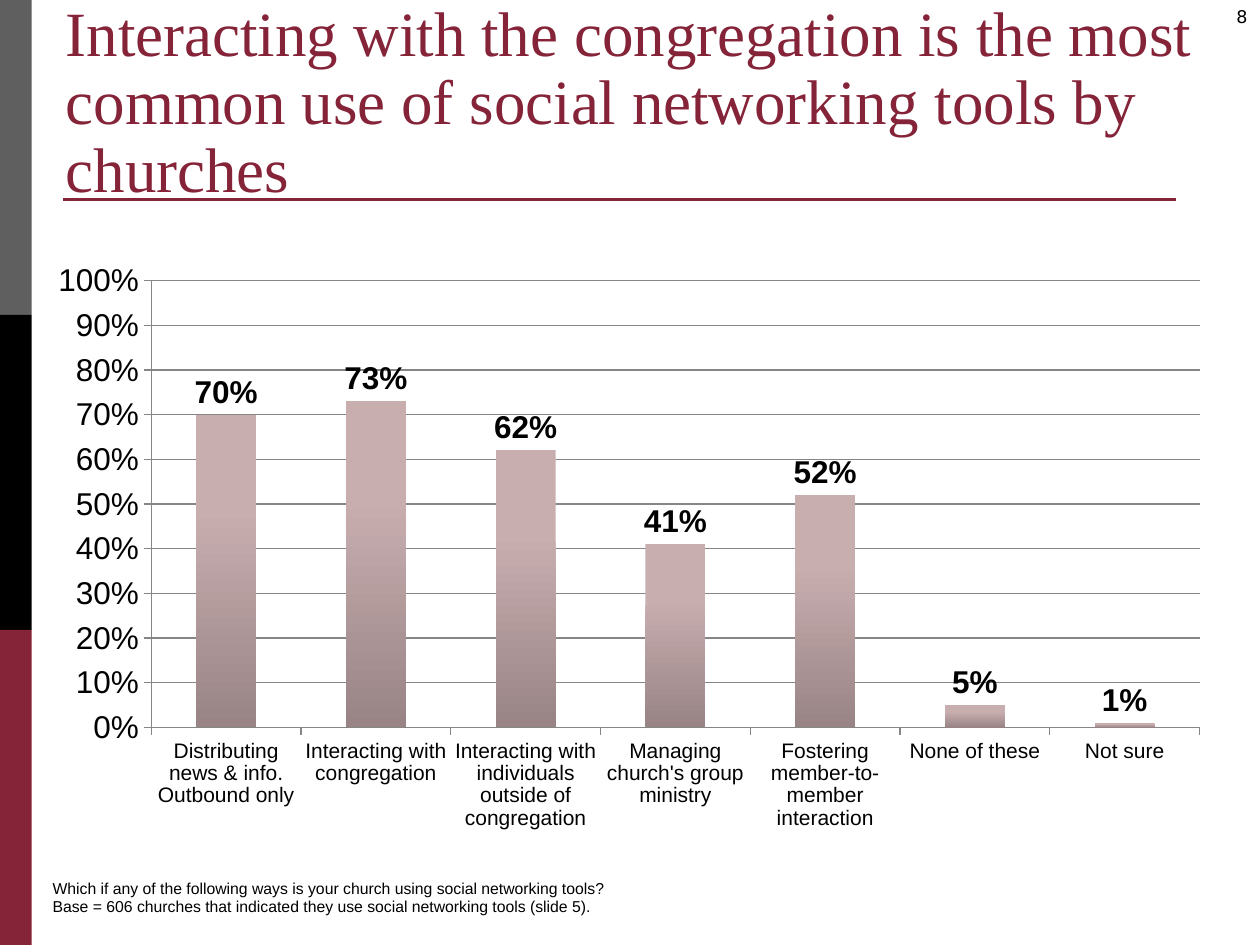
from lxml.etree import SubElement
from pptx import Presentation
from pptx.chart.data import CategoryChartData
from pptx.dml.color import RGBColor
from pptx.enum.chart import XL_CHART_TYPE, XL_LABEL_POSITION, XL_TICK_MARK
from pptx.enum.shapes import MSO_CONNECTOR, MSO_SHAPE
from pptx.enum.text import MSO_ANCHOR, PP_ALIGN
from pptx.oxml import parse_xml
from pptx.oxml.ns import nsdecls, qn
from pptx.util import Cm, Pt

MAROON, GREY, BLACK = "852338", "5F5F5F", "000000"
AXIS_GREY, BAR_TOP, BAR_BOTTOM = "868686", "C9AEB0", "988485"

USES = {
    "Distributing news & info. Outbound only": 0.70,
    "Interacting with congregation": 0.73,
    "Interacting with individuals outside of congregation": 0.62,
    "Managing church's group ministry": 0.41,
    "Fostering member-to-member interaction": 0.52,
    "None of these": 0.05,
    "Not sure": 0.01,
}


def rgb(color):
    return RGBColor.from_string(color)


def set_font(font, size, color=BLACK, name="Arial", bold=False):
    font.size, font.name, font.bold = Pt(size), name, bold
    font.color.rgb = rgb(color)


def place(sp, left, top, width, height):
    sp.left, sp.top, sp.width, sp.height = Cm(left), Cm(top), Cm(width), Cm(height)


def set_plot_area(chart, x, y, w, h):
    """Fix the inner plot area, given as fractions of the chart."""
    area = chart.plots[0]._element.getparent()
    for old in area.findall(qn("c:layout")):
        area.remove(old)
    layout = parse_xml(f"<c:layout {nsdecls('c')}><c:manualLayout/></c:layout>")
    values = {"layoutTarget": "inner", "xMode": "edge", "yMode": "edge",
              "x": x, "y": y, "w": w, "h": h}
    for tag, value in values.items():
        SubElement(layout[0], qn(f"c:{tag}")).set("val", str(value))
    area.insert(0, layout)


def keep_labels_level(axis):
    """Stop long tick labels from being slanted, so that they wrap."""
    body = axis._element.find(qn("c:txPr")).find(qn("a:bodyPr"))
    body.set("rot", "0")
    body.set("vert", "horz")


class SlideBuilder:
    def __init__(self, prs):
        self.s = prs.slides.add_slide(prs.slide_layouts[5])

    def title(self, text, *box):
        sp = self.s.shapes.title
        place(sp, *box)
        tf = sp.text_frame
        tf.text = text
        tf.word_wrap = True
        tf.vertical_anchor = MSO_ANCHOR.BOTTOM
        p = tf.paragraphs[0]
        p.alignment = PP_ALIGN.LEFT
        p.line_spacing = 0.9
        set_font(p.runs[0].font, 36, MAROON, "Times New Roman")

    def band(self, color, *box):
        sp = self.s.shapes.add_shape(MSO_SHAPE.RECTANGLE, *map(Cm, box))
        sp.shadow.inherit = False
        sp.fill.solid()
        sp.fill.fore_color.rgb = rgb(color)
        sp.line.fill.background()

    def rule(self, left, right, y):
        line = self.s.shapes.add_connector(
            MSO_CONNECTOR.STRAIGHT, Cm(left), Cm(y), Cm(right), Cm(y))
        line.line.color.rgb = rgb(MAROON)
        line.line.width = Pt(1.5)
        SubElement(line._element.spPr, qn("a:effectLst"))

    def text(self, text, size, *box, name="Arial", align=PP_ALIGN.LEFT):
        tf = self.s.shapes.add_textbox(*map(Cm, box)).text_frame
        tf.word_wrap = True
        tf.text = text
        p = tf.paragraphs[0]
        p.alignment = align
        for r in p.runs:
            set_font(r.font, size, name=name)

    def column_chart(self, values, *box):
        data = CategoryChartData(number_format="0%")
        data.categories = list(values)
        data.add_series("Series 1", list(values.values()))
        chart = self.s.shapes.add_chart(
            XL_CHART_TYPE.COLUMN_CLUSTERED, *map(Cm, box), data).chart
        chart.has_legend = chart.has_title = False
        set_font(chart.font, 18)
        set_plot_area(chart, 0.093, 0.075, 0.889, 0.705)

        for axis, size in ((chart.category_axis, 12), (chart.value_axis, 18)):
            axis.major_tick_mark = XL_TICK_MARK.OUTSIDE
            axis.minor_tick_mark = XL_TICK_MARK.NONE
            axis.format.line.color.rgb = rgb(AXIS_GREY)
            set_font(axis.tick_labels.font, size)
            keep_labels_level(axis)
        axis = chart.value_axis
        axis.minimum_scale, axis.maximum_scale, axis.major_unit = 0, 1, 0.1
        axis.tick_labels.number_format = "0%"
        axis.tick_labels.number_format_is_linked = False
        axis.major_gridlines.format.line.color.rgb = rgb(AXIS_GREY)

        plot = chart.plots[0]
        plot.gap_width = 150
        plot.vary_by_categories = False
        fill = plot.series[0].format.fill
        fill.gradient()
        fill.gradient_angle = 270
        for stop, position, color in zip(
                fill.gradient_stops, (0.3, 1), (BAR_TOP, BAR_BOTTOM)):
            stop.position = position
            stop.color.rgb = rgb(color)

        labels = plot.series[0].data_labels
        labels.show_value = True
        labels.number_format = "0%"
        labels.number_format_is_linked = False
        labels.position = XL_LABEL_POSITION.OUTSIDE_END
        set_font(labels.font, 18, bold=True)


def main():
    prs = Presentation()
    prs.slide_width, prs.slide_height = Cm(25.4), Cm(19.05)
    slide = SlideBuilder(prs)

    band_height = 19.05 / 3
    for i, color in enumerate((GREY, BLACK, MAROON)):
        slide.band(color, 0, i * band_height, 0.64, band_height)
    slide.rule(1.27, 23.7, 4.02)
    slide.text("8", 10, 24.13, 0, 1.27, 0.84,
               name="DejaVu Sans", align=PP_ALIGN.RIGHT)
    slide.column_chart(USES, 0.84, 4.7, 23.77, 12.78)
    slide.title("Interacting with the congregation is the most common use of "
                "social networking tools by churches", 1.07, 0.78, 24.33, 3.5)
    slide.text("Which if any of the following ways is your church using social "
               "networking tools? \vBase = 606 churches that indicated they use "
               "social networking tools (slide 5).", 9, 0.81, 17.58, 19.46, 1.02)
    prs.save("out.pptx")


if __name__ == "__main__":
    main()
